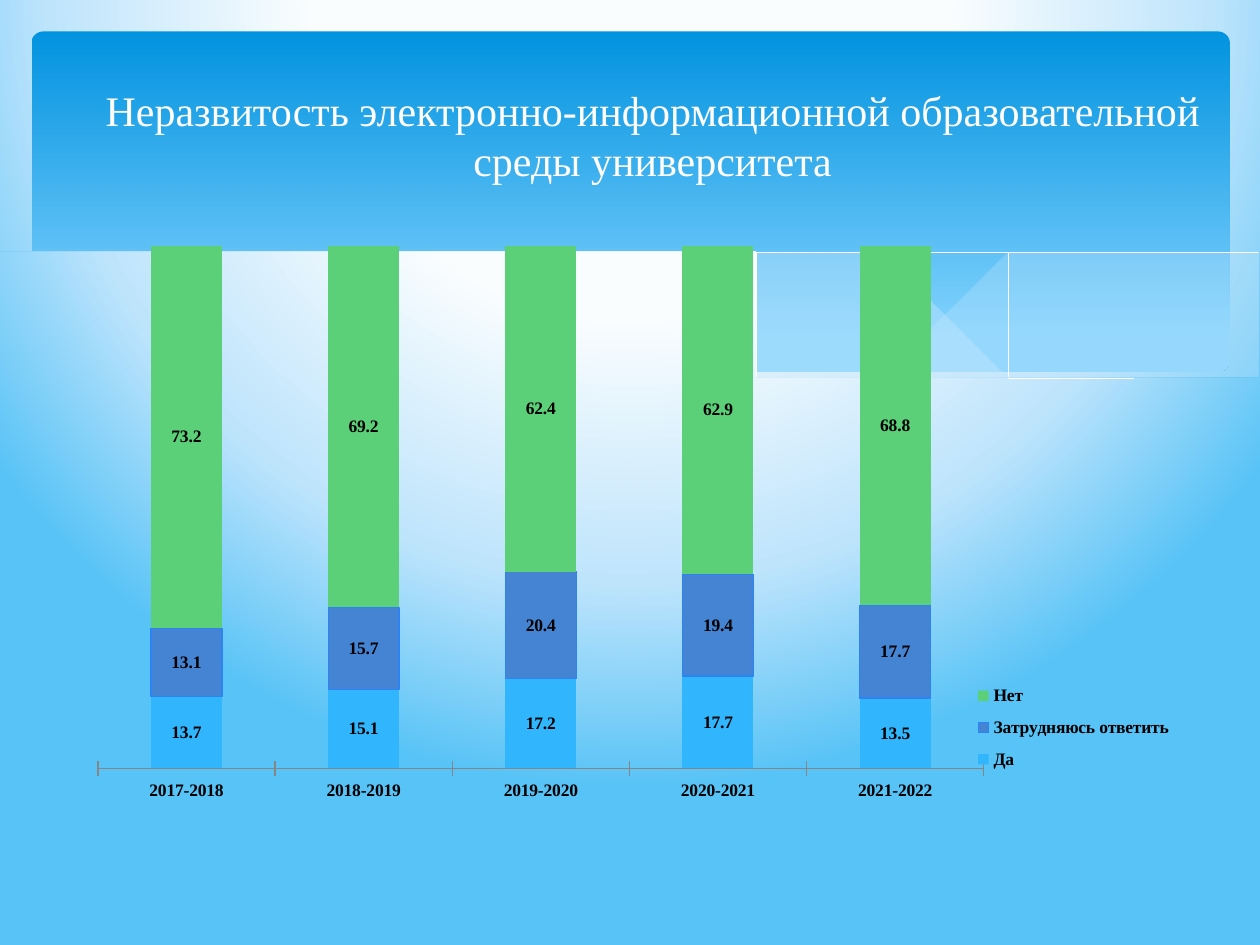
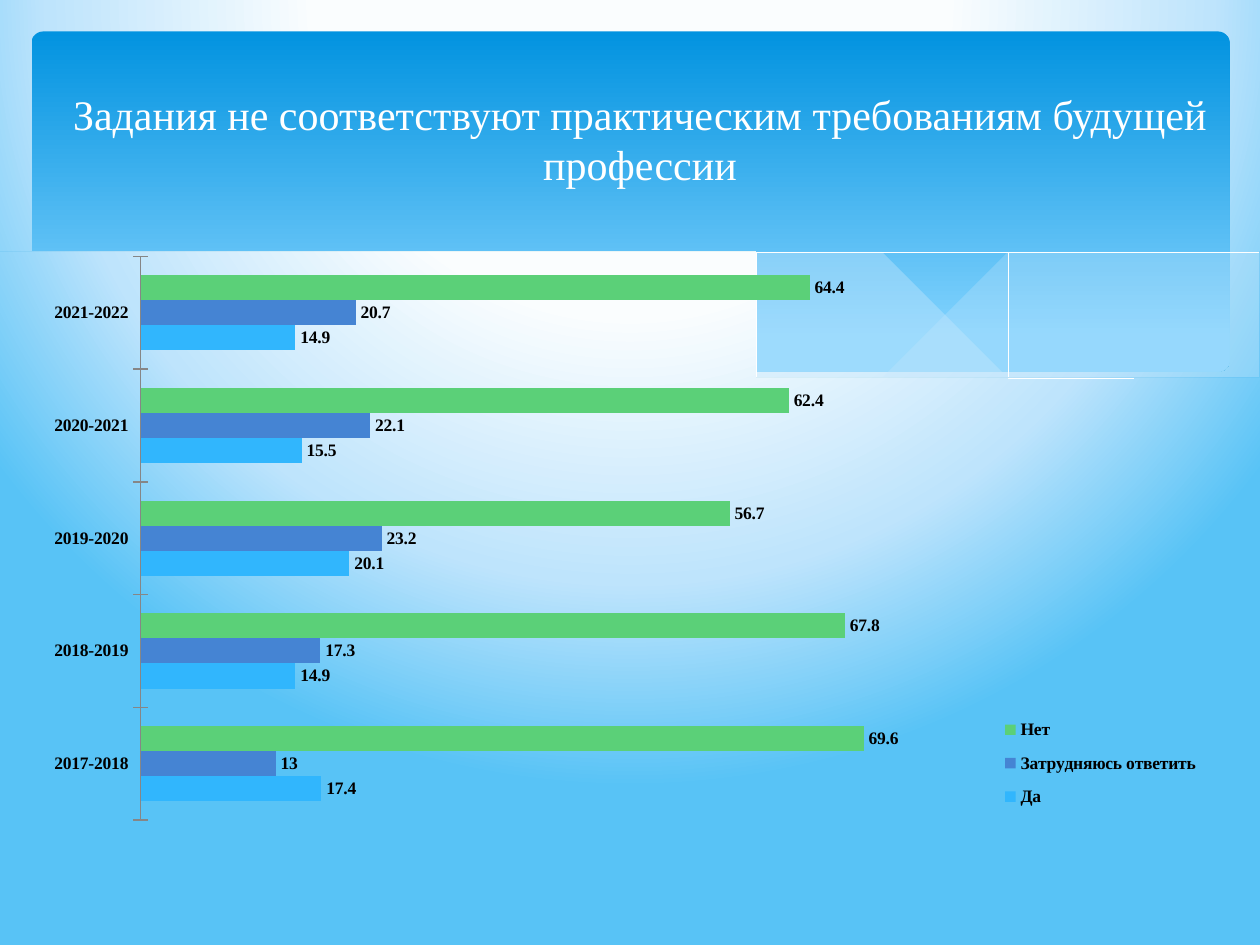
"""Build two survey slides with a wave banner, a title and a bar chart."""
from lxml.etree import SubElement
from pptx import Presentation
from pptx.chart.data import CategoryChartData
from pptx.dml.color import RGBColor
from pptx.enum.chart import XL_CHART_TYPE, XL_LABEL_POSITION, XL_LEGEND_POSITION, XL_TICK_MARK
from pptx.enum.shapes import MSO_SHAPE
from pptx.enum.text import MSO_ANCHOR, PP_ALIGN
from pptx.oxml.ns import qn
from pptx.util import Inches, Pt

COLORS = {
    "white": "FFFFFF", "black": "000000", "axis": "868686",
    "top": "0293E0", "base": "83D3FE", "veil": "C6E7FC",
    "glow": "FAFDFE", "pale": "BEE4FC", "sky": "58C3F6",
    "yes": "31B6FD", "unsure": "4584D3", "no": "5BD078", "edge": "2D83F4",
}
RGB = {name: RGBColor.from_string(code) for name, code in COLORS.items()}
FONT = "Times New Roman"
YEARS = ["2017-2018", "2018-2019", "2019-2020", "2020-2021", "2021-2022"]
ANSWERS = [("Да", "yes"), ("Затрудняюсь ответить", "unsure"), ("Нет", "no")]

RIGHT = [(9.76, 2), (9.35, 2.07), (8.91, 2.16), (8.61, 2.23), (8.05, 2.37), (7.29, 2.53),
         (6.61, 2.65)]
RIGHT_LOW = [(6.61, 2.65), (7.05, 2.71), (7.45, 2.75), (7.81, 2.77), (8.24, 2.77),
             (8.63, 2.75), (8.97, 2.7), (9.28, 2.63), (9.49, 2.57), (9.76, 2.47)]
MID = [(8.93, 2.73), (8.37, 2.65), (7.75, 2.54), (7.06, 2.4), (6.29, 2.22), (5.69, 2.08),
       (5.14, 1.98), (4.65, 1.91), (4.2, 1.87), (3.8, 1.85), (3.44, 1.86), (3.13, 1.88),
       (2.86, 1.91)]
MID_LOW = [(2.86, 1.91), (3.42, 1.99), (4.04, 2.11), (4.49, 2.22), (5.3, 2.4), (6.01, 2.55),
           (6.65, 2.66), (7.22, 2.74), (7.73, 2.77), (8.18, 2.78), (8.57, 2.77), (8.93, 2.73)]
FALL = [(3.09, 1.95), (3.28, 1.92), (3.63, 1.89), (4.01, 1.87), (4.5, 1.88), (5.1, 1.92),
        (5.82, 2), (6.65, 2.13), (7.6, 2.33), (8.31, 2.51), (9.07, 2.72)]
RISE = [(6.13, 2.57), (6.53, 2.46), (6.95, 2.35), (7.48, 2.23), (8.06, 2.1), (8.66, 1.99),
        (9.1, 1.92), (9.51, 1.87), (9.75, 1.85)]
FRONT = [(0.23, 2.13), (0.4, 2.05), (0.67, 1.97), (0.95, 1.91), (1.32, 1.86), (1.77, 1.84),
         (2.3, 1.85), (2.92, 1.9), (3.65, 2.02), (4.47, 2.2), (5.29, 2.39), (6.03, 2.54),
         (6.68, 2.65), (7.26, 2.72), (7.78, 2.76), (8.23, 2.77), (8.63, 2.74), (8.99, 2.69),
         (9.3, 2.62), (9.59, 2.53), (9.77, 2.46)]
WAVES = [
    ([RIGHT, RIGHT_LOW], "veil", 29),
    ([MID, MID_LOW], "veil", 40),
    ([FALL], "line", 0),
    ([RISE], "line", 0),
    ([FRONT, [(9.77, 3.29), (0.23, 3.29)]], "back", 0),
]

PAGES = [
    {
        "title": "Неразвитость электронно-информационной образовательной среды университета",
        "box": (0.43, 0.36, 9.5, 1.42),
        "kind": XL_CHART_TYPE.COLUMN_STACKED_100,
        "area": (0.51, 1.7, 8.9, 5),
        "plot": (0.03, 0.05, 0.79, 0.83),
        "key": (0.81, 0.73, 0.18, 0.17),
        "rows": [(13.7, 15.1, 17.2, 17.7, 13.5), (13.1, 15.7, 20.4, 19.4, 17.7),
                 (73.2, 69.2, 62.4, 62.9, 68.8)],
        "max": 1, "lap": 100, "spot": XL_LABEL_POSITION.CENTER,
    },
    {
        "title": "Задания не соответствуют практическим требованиям будущей профессии",
        "box": (0.33, 0.5, 9.5, 1.2),
        "kind": XL_CHART_TYPE.BAR_CLUSTERED,
        "area": (0.28, 1.94, 9.29, 4.76),
        "plot": (0.09, 0.02, 0.71, 0.94),
        "key": (0.82, 0.77, 0.18, 0.19),
        "rows": [(17.4, 14.9, 20.1, 15.5, 14.9), (13, 17.3, 23.2, 22.1, 20.7),
                 (69.6, 67.8, 56.7, 62.4, 64.4)],
        "max": 80, "lap": 0, "spot": XL_LABEL_POSITION.OUTSIDE_END,
    },
]


def smooth(knots, steps=5):
    """Return points on a Catmull-Rom curve through the knots."""
    ends = [knots[0], *knots, knots[-1]]
    points = [knots[0]]
    for a, b, c, d in zip(ends, ends[1:], ends[2:], ends[3:]):
        for step in range(1, steps + 1):
            t = step / steps
            points.append(tuple(
                (2 * q + (r - p) * t + (2 * p - 5 * q + 4 * r - s) * t**2
                 + (3 * q - p - 3 * r + s) * t**3) / 2
                for p, q, r, s in zip(a, b, c, d)))
    return points


def place(layout, box, inner=False):
    """Fill a chart layout element with a manual position."""
    manual = SubElement(layout, qn("c:manualLayout"))
    if inner:
        SubElement(manual, qn("c:layoutTarget")).set("val", "inner")
    for tag in ("xMode", "yMode"):
        SubElement(manual, qn(f"c:{tag}")).set("val", "edge")
    for tag, size in zip("xywh", box):
        SubElement(manual, qn(f"c:{tag}")).set("val", str(size))


prs = Presentation()
prs.slide_width, prs.slide_height = Inches(10), Inches(7.5)

for page in PAGES:
    slide = prs.slides.add_slide(prs.slide_layouts[6])
    slide.background.fill.gradient()
    grad = slide.element.find(".//" + qn("a:gradFill"))
    for child in list(grad):
        grad.remove(child)
    stops = SubElement(grad, qn("a:gsLst"))
    for pos, name in ((40, "glow"), (74, "pale"), (100, "sky")):
        stop = SubElement(stops, qn("a:gs"), pos=str(pos * 1000))
        SubElement(stop, qn("a:srgbClr"), val=COLORS[name])
    ring = SubElement(grad, qn("a:path"))
    ring.set("path", "circle")
    SubElement(ring, qn("a:fillToRect"), l="20000", t="-40000", r="20000", b="140000")

    panel = slide.shapes.add_shape(
        MSO_SHAPE.ROUNDED_RECTANGLE, *map(Inches, (0.25, 0.25, 9.51, 2.7)))
    panel.adjustments[0] = 0.034
    panel.shadow.inherit = False
    panel.line.fill.background()
    panel.fill.gradient()
    panel.fill.gradient_angle = 270
    for stop, name, pos in zip(panel.fill.gradient_stops, ("top", "base"), (0, 0.9)):
        stop.color.rgb = RGB[name]
        stop.position = pos

    for edges, look, alpha in WAVES:
        points = []
        for edge in edges:
            points += smooth(edge) if len(edge) > 2 else edge
        pen = slide.shapes.build_freeform(*points[0], scale=Inches(1))
        pen.add_line_segments(points[1:], close=look != "line")
        wave = pen.convert_to_shape()
        wave.shadow.inherit = False
        if look == "line":
            wave.fill.background()
            wave.line.color.rgb = RGB["white"]
            wave.line.width = Pt(0.1)
            continue
        wave.line.fill.background()
        if look == "back":
            wave.element.set("useBgFill", "1")
            continue
        wave.fill.solid()
        wave.fill.fore_color.rgb = RGB[look]
        tint = wave.element.spPr.find(".//" + qn("a:srgbClr"))
        SubElement(tint, qn("a:alpha"), val=str(alpha * 1000))

    frame = slide.shapes.add_textbox(*map(Inches, page["box"])).text_frame
    frame.word_wrap = True
    frame.vertical_anchor = MSO_ANCHOR.MIDDLE
    frame.text = page["title"]
    line = frame.paragraphs[0]
    line.alignment = PP_ALIGN.CENTER
    font = line.runs[0].font
    font.name, font.size, font.color.rgb = FONT, Pt(24), RGB["white"]

    data = CategoryChartData()
    data.categories = YEARS
    for (name, _), row in zip(ANSWERS, page["rows"]):
        data.add_series(name, row)
    chart = slide.shapes.add_chart(page["kind"], *map(Inches, page["area"]), data).chart
    chart.has_title = False
    chart.font.name, chart.font.size = "Cabin", Pt(10)
    chart.font.color.rgb = RGB["black"]

    years, scale = chart.category_axis, chart.value_axis
    years.major_tick_mark = XL_TICK_MARK.CROSS
    years.format.line.color.rgb = RGB["axis"]
    scale.has_major_gridlines = False
    scale.visible = False
    scale.minimum_scale, scale.maximum_scale = 0, page["max"]

    chart.has_legend = True
    legend = chart.legend
    legend.position = XL_LEGEND_POSITION.RIGHT
    legend.include_in_layout = False
    fonts = [years.tick_labels.font, legend.font]

    plot = chart.plots[0]
    plot.gap_width, plot.overlap, plot.vary_by_categories = 150, page["lap"], False
    for series, (_, color) in zip(plot.series, ANSWERS):
        series.format.fill.solid()
        series.format.fill.fore_color.rgb = RGB[color]
        labels = series.data_labels
        labels.show_value = True
        labels.position = page["spot"]
        fonts.append(labels.font)
        if page["lap"] and color == "unsure":
            series.format.line.color.rgb = RGB["edge"]
            series.format.line.width = Pt(0.75)
    for font in fonts:
        font.name, font.size, font.bold = FONT, Pt(10), True
        font.color.rgb = RGB["black"]

    area = chart.element.find(".//" + qn("c:plotArea"))
    for old in area.findall(qn("c:layout")):
        area.remove(old)
    spot = SubElement(area, qn("c:layout"))
    area.insert(0, spot)
    place(spot, page["plot"], inner=True)
    key = chart.element.find(".//" + qn("c:legend"))
    for old in key.findall(qn("c:layout")):
        key.remove(old)
    spot = SubElement(key, qn("c:layout"))
    key.insert(1, spot)
    place(spot, page["key"])

prs.save("out.pptx")
